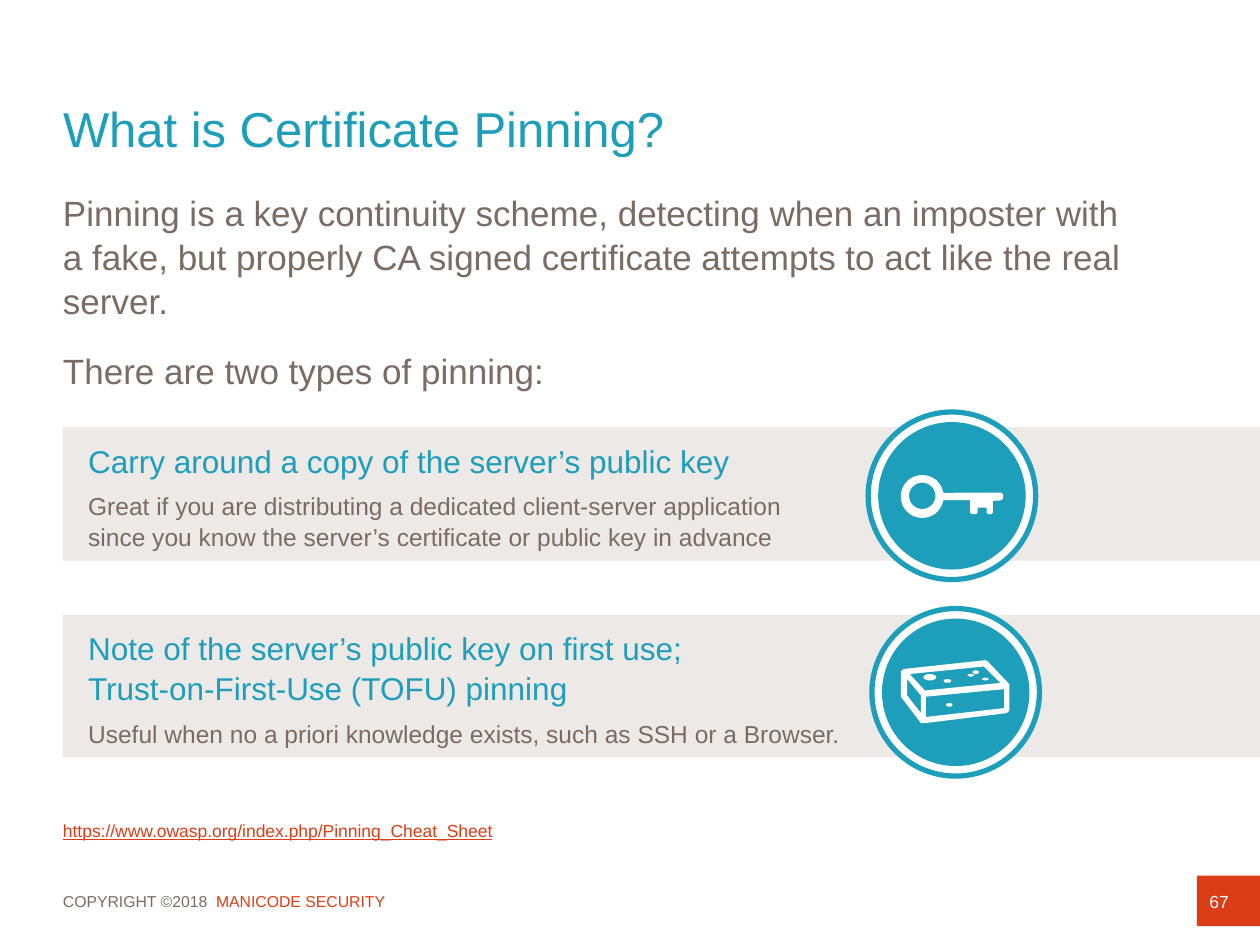
import math
from dataclasses import dataclass

import pptx
import pptx.dml.color
import pptx.enum.shapes
import pptx.enum.text
import pptx.util

KIND = pptx.enum.shapes.MSO_SHAPE
ALIGN = pptx.enum.text.PP_ALIGN
ANCHOR = pptx.enum.text.MSO_ANCHOR


@dataclass(frozen=True)
class Theme:
    """Colours, type sizes and grid of the slide."""
    font: str = "Arial"
    teal: str = "1D9EBA"
    brown: str = "7A6C62"
    red: str = "DB3D16"
    sand: str = "ECE9E7"
    white: str = "FFFFFF"
    title: int = 28
    body: int = 20
    head: int = 18
    note: int = 14
    small: int = 10
    foot: int = 9
    lead: float = 1.05
    cols: int = 20
    rows: int = 15


THEME = Theme()
WIDTH, HEIGHT = pptx.util.Inches(10), pptx.util.Inches(7.5)


def cell(col, row, cols, rows):
    """Turn grid columns and rows into a box of left, top, width, height."""
    wide, high = WIDTH / THEME.cols, HEIGHT / THEME.rows
    return tuple(round(n) for n in (col * wide, row * high, cols * wide, rows * high))


def rgb(tone):
    """Return a colour object for a hex string."""
    return pptx.dml.color.RGBColor.from_string(tone)


def style(part, size, tone):
    """Set the font of a paragraph or run."""
    part.font.name = THEME.font
    part.font.size = pptx.util.Pt(size)
    part.font.color.rgb = rgb(tone)


def frame(shape, inset=(0, 0, 0, 0), anchor=ANCHOR.TOP):
    """Set wrap, insets in inches and anchor, and return the text frame."""
    text = shape.text_frame
    text.word_wrap = True
    text.auto_size = pptx.enum.text.MSO_AUTO_SIZE.NONE
    text.vertical_anchor = anchor
    (text.margin_left, text.margin_top,
     text.margin_right, text.margin_bottom) = map(pptx.util.Inches, inset)
    return text


def write(text, lines, before=0, after=0):
    """Fill a text frame with (words, size, colour) paragraphs."""
    for i, (words, size, tone) in enumerate(lines):
        para = text.add_paragraph() if i else text.paragraphs[0]
        para.text = words
        para.alignment = ALIGN.LEFT
        para.line_spacing = THEME.lead
        para.space_before = pptx.util.Pt(before if i else 0)
        para.space_after = pptx.util.Pt(after)
        style(para, size, tone)


def paint(shape, fill, edge=None):
    """Give a shape a flat fill and an optional thick edge."""
    shape.shadow.inherit = False
    shape.fill.solid()
    shape.fill.fore_color.rgb = rgb(fill)
    if edge:
        shape.line.color.rgb = rgb(edge)
        shape.line.width = pptx.util.Pt(3)
    else:
        shape.line.fill.background()


def title(slide, box, words):
    """Place and format the title."""
    shape = slide.shapes.title
    shape.left, shape.top, shape.width, shape.height = box
    text = frame(shape, anchor=ANCHOR.MIDDLE)
    write(text, [(words, THEME.title, THEME.teal)])


def intro(slide, box, lines):
    """Place the opening paragraphs."""
    text = frame(slide.shapes.add_textbox(*box))
    write(text, [(line, THEME.body, THEME.brown) for line in lines], before=15)


def source(slide, box, words):
    """Place the underlined web address."""
    text = frame(slide.shapes.add_textbox(*box))
    write(text, [(words, THEME.small, THEME.red)])
    text.paragraphs[0].font.underline = True


def band(slide, box, head, note):
    """Draw a sand band with a heading and a note."""
    shape = slide.shapes.add_shape(KIND.RECTANGLE, *box)
    paint(shape, THEME.sand)
    text = frame(shape, (0.2, 0.1, 2, 0.1))
    write(text, [(head, THEME.head, THEME.teal),
                 (note, THEME.note, THEME.brown)], before=3, after=3)


def arc(x, y, wide, high, start=0, sweep=360):
    """List points along an ellipse, with angles in degrees."""
    turns = [math.radians(start + sweep * i / 40) for i in range(41)]
    return [(x + wide * math.cos(t), y + high * math.sin(t)) for t in turns]


def key():
    """Return the rings of a key, in thousandths of its badge."""
    bow = arc(323, 504, 128, 128, 10, 340)
    shaft = [(790, 481), (805, 490), (805, 517), (790, 528), (744, 530),
             (744, 600), (735, 609), (716, 609), (707, 600), (707, 571),
             (654, 571), (654, 600), (645, 609), (618, 609), (609, 600),
             (609, 526)]
    return [bow + shaft, arc(323, 500, 79, 79)]


def brick():
    """Return the rings of a spotted brick, in thousandths of its badge."""
    edge = [(692, 316), (677, 308), (188, 361), (173, 376), (173, 526),
            (293, 684), (316, 684), (805, 624), (820, 609), (820, 451)]
    top = [(767, 444), (316, 489), (226, 391), (669, 346)]
    side = [(211, 421), (293, 519), (293, 624), (211, 519)]
    front = [(789, 594), (323, 647), (323, 526), (789, 481)]
    spots = [(346, 410, 38, 19), (451, 432, 22, 11), (620, 380, 19, 11),
             (590, 398, 19, 8), (677, 421, 19, 8), (462, 575, 19, 11)]
    return [edge, top, side, front] + [arc(*spot) for spot in spots]


def badge(slide, box, rings):
    """Draw a ringed disc with a white icon in one group."""
    left, top, size, _ = box
    shapes = slide.shapes.add_group_shape().shapes
    paint(shapes.add_shape(KIND.OVAL, *box), THEME.white, THEME.teal)
    gap = round(size * 0.06)
    disc = shapes.add_shape(KIND.OVAL, left + gap, top + gap,
                            size - 2 * gap, size - 2 * gap)
    paint(disc, THEME.teal)
    pen = shapes.build_freeform(*rings[0][0], scale=size / 1000)
    for i, ring in enumerate(rings):
        if i:
            pen.move_to(*ring[0])
        pen.add_line_segments(ring[1:], close=True)
    paint(pen.convert_to_shape(left, top), THEME.white)


def footer(slide, box, parts):
    """Place the two-tone copyright line."""
    text = frame(slide.shapes.add_textbox(*box), anchor=ANCHOR.MIDDLE)
    for words, tone in parts:
        run = text.paragraphs[0].add_run()
        run.text = words
        style(run, THEME.foot, tone)


def number(slide, box, words):
    """Draw the page number tab."""
    shape = slide.shapes.add_shape(KIND.RECTANGLE, *box)
    paint(shape, THEME.red)
    text = frame(shape, (0.1, 0.05, 0.1, 0.05), ANCHOR.MIDDLE)
    write(text, [(words, THEME.small, THEME.white)])


def main():
    """Build the slide and save it."""
    deck = pptx.Presentation()
    deck.slide_width, deck.slide_height = WIDTH, HEIGHT
    slide = deck.slides.add_slide(deck.slide_layouts[5])
    footer(slide, cell(1, 13.9, 18, 0.8),
           [("COPYRIGHT ©2018  ", THEME.brown), ("MANICODE SECURITY", THEME.red)])
    title(slide, cell(1, 1, 18, 2), "What is Certificate Pinning?")
    intro(slide, cell(1, 3, 18, 3.5), [
        "Pinning is a key continuity scheme, detecting when an imposter with\n"
        "a fake, but properly CA signed certificate attempts to act like the real server.",
        "There are two types of pinning:"])
    source(slide, cell(1, 13, 18, 0.5),
           "https://www.owasp.org/index.php/Pinning_Cheat_Sheet")
    number(slide, cell(19, 13.9, 1, 0.8), "67")
    band(slide, cell(1, 6.78, 19, 2.12),
         "Carry around a copy of the server’s public key",
         "Great if you are distributing a dedicated client-server application\n"
         "since you know the server’s certificate or public key in advance")
    badge(slide, cell(13.78, 6.54, 2.66, 2.66), key())
    band(slide, cell(1, 9.76, 19, 2.26),
         "Note of the server’s public key on first use;\n"
         "Trust-on-First-Use (TOFU) pinning",
         "Useful when no a priori knowledge exists, such as SSH or a Browser.")
    badge(slide, cell(13.84, 9.66, 2.66, 2.66), brick())
    deck.save("out.pptx")


if __name__ == "__main__":
    main()
